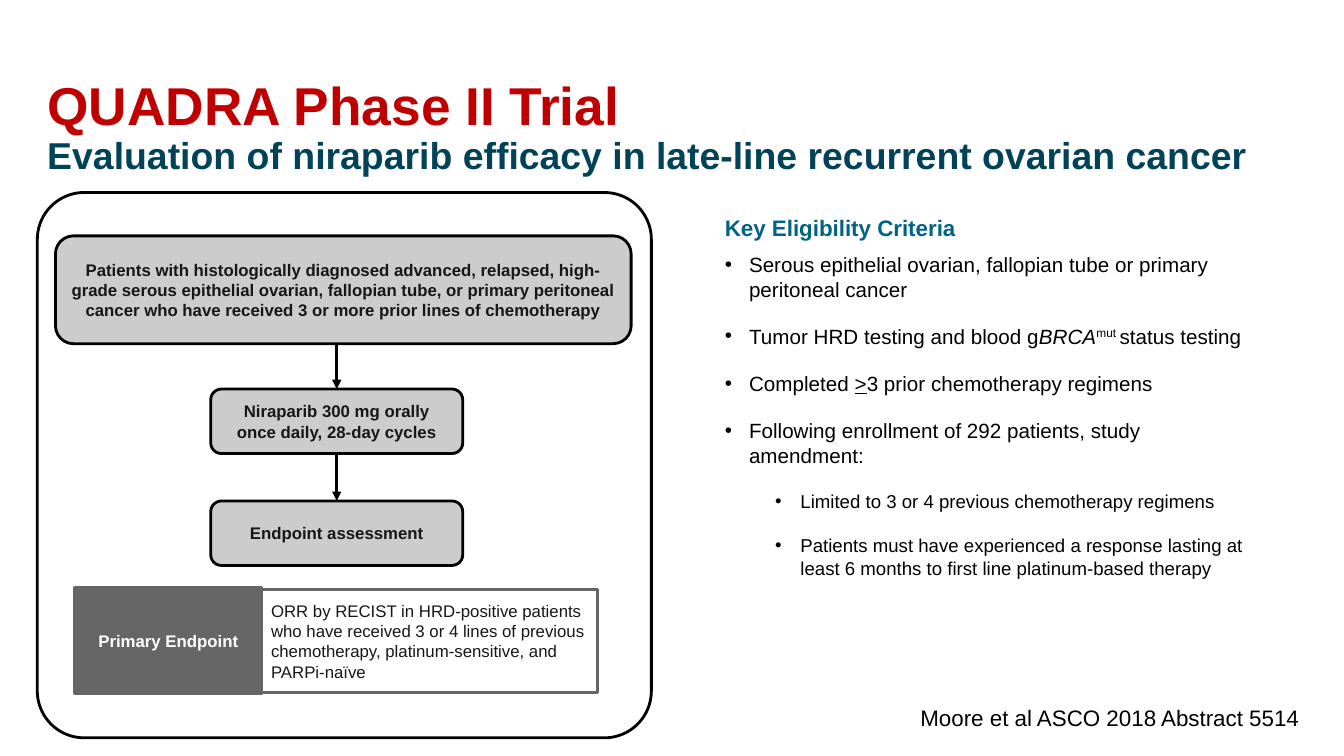
"""Build the QUADRA Phase II trial slide."""
from lxml.etree import SubElement
from pptx import Presentation
from pptx.dml.color import RGBColor
from pptx.enum.shapes import MSO_CONNECTOR, MSO_SHAPE
from pptx.enum.text import MSO_ANCHOR, PP_ALIGN
from pptx.oxml.ns import qn
from pptx.util import Inches, Pt

ROUND, RECT = MSO_SHAPE.ROUNDED_RECTANGLE, MSO_SHAPE.RECTANGLE
BLACK, WHITE, INK = "000000", "FFFFFF", "181717"
LIGHT, DARK = "CCCCCC", "666666"
RULES = [
    (0, [("Serous epithelial ovarian, fallopian tube or primary peritoneal cancer", "")]),
    (0, [("Tumor HRD testing and blood g", ""), ("BRCA", "italic"),
         ("mut ", "super"), ("status testing", "")]),
    (0, [("Completed ", ""), (">", "under"), ("3 prior chemotherapy regimens", "")]),
    (0, [("Following enrollment of 292 patients, study amendment:", "")]),
    (1, [("Limited to 3 or 4 previous chemotherapy regimens", "")]),
    (1, [("Patients must have experienced a response lasting at least 6 months "
          "to first line platinum-based therapy", "")]),
]


def paint(color):
    """Turn a hex string into a colour."""
    return RGBColor.from_string(color)


def style(run, size, color, bold=False):
    """Set the font of a run."""
    font = run.font
    font.name, font.size, font.bold = "Arial", Pt(size), bold
    font.color.rgb = paint(color)


def write(par, text, size, color, bold=False):
    """Fill a paragraph with text in one style."""
    par.text = text
    style(par.runs[0], size, color, bold)


def add_title(slide, left, top, width, height):
    """Place the slide title."""
    title = slide.shapes.title
    title.left, title.top = Inches(left), Inches(top)
    title.width, title.height = Inches(width), Inches(height)
    frame = title.text_frame
    frame.vertical_anchor = MSO_ANCHOR.MIDDLE
    par = frame.paragraphs[0]
    write(par, "QUADRA Phase II Trial", 38, "C00000", True)
    par.alignment = PP_ALIGN.LEFT


def add_text(slide, left, top, width, height, wrap=True):
    """Add an empty text box and return its frame."""
    box = slide.shapes.add_textbox(
        Inches(left), Inches(top), Inches(width), Inches(height))
    box.text_frame.word_wrap = wrap
    return box.text_frame


def add_box(slide, kind, left, top, width, height, fill, line, weight=2):
    """Add an outlined shape, filled if a fill is given."""
    box = slide.shapes.add_shape(
        kind, Inches(left), Inches(top), Inches(width), Inches(height))
    box.shadow.inherit = False
    if fill:
        box.fill.solid()
        box.fill.fore_color.rgb = paint(fill)
    else:
        box.fill.background()
    box.line.color.rgb = paint(line)
    box.line.width = Pt(weight)
    return box


def label(box, text, color=INK, bold=True, align=PP_ALIGN.CENTER):
    """Write a label in a shape."""
    frame = box.text_frame
    frame.word_wrap = True
    frame.vertical_anchor = MSO_ANCHOR.MIDDLE
    par = frame.paragraphs[0]
    par.alignment = align
    write(par, text, 12, color, bold)


def add_arrow(slide, first, last):
    """Draw an arrow down to the top of the last box."""
    mid = last.left + last.width // 2
    base = first.top + first.height
    arrow = slide.shapes.add_connector(
        MSO_CONNECTOR.STRAIGHT, mid, base, mid, last.top)
    if first.left + first.width // 2 == mid:
        arrow.begin_connect(first, 2)
    arrow.end_connect(last, 0)
    arrow.line.color.rgb = paint(BLACK)
    arrow.line.width = Pt(2.25)
    SubElement(arrow.line._get_or_add_ln(), qn("a:tailEnd"), type="triangle")
    SubElement(arrow._element.spPr, qn("a:effectLst"))


def add_flow(slide, left, top, width, height):
    """Draw the framed trial flow."""
    frame = add_box(slide, ROUND, left, top, width, height, WHITE, BLACK)
    frame.adjustments[0] = 0.086
    group = add_box(slide, ROUND, left + 0.18, top + 0.43, 5.71, 1.07, LIGHT, BLACK)
    label(group, "Patients with histologically diagnosed advanced, relapsed, "
          "high-grade serous epithelial ovarian, fallopian tube, or primary "
          "peritoneal cancer who have received 3 or more prior lines of chemotherapy")
    last = group
    steps = ["Niraparib 300 mg orally once daily, 28-day cycles", "Endpoint assessment"]
    for row, text in enumerate(steps):
        step = add_box(slide, ROUND, left + 1.72, top + 1.95 + 1.11 * row,
                       2.5, 0.64, LIGHT, BLACK)
        label(step, text)
        add_arrow(slide, last, step)
        last = step
    add_goal(slide, left + 0.37, top + 3.92, 5.19, 1.05)


def add_goal(slide, left, top, width, height):
    """Draw the primary endpoint with its tag."""
    tag = add_box(slide, RECT, left, top, 1.86, height, DARK, DARK)
    label(tag, "Primary Endpoint", WHITE)
    goal = add_box(slide, RECT, left + 1.85, top + 0.02, width - 1.85,
                   height - 0.03, None, DARK, 2.25)
    label(goal, "ORR by RECIST in HRD-positive patients who have received 3 or 4 "
          "lines of previous chemotherapy, platinum-sensitive, and PARPi-naïve",
          bold=False, align=PP_ALIGN.LEFT)


def add_rule(frame, level, parts):
    """Add one bulleted criterion."""
    par = frame.add_paragraph()
    par.level = level
    par.space_after = Pt(16)
    props = par._p.get_or_add_pPr()
    props.set("marL", str(Inches((0.24, 0.75)[level])))
    props.set("indent", str(-Inches((0.24, 0.25)[level])))
    SubElement(props, qn("a:buFont"), typeface="Arial")
    SubElement(props, qn("a:buChar"), char="•")
    for text, look in parts:
        run = par.add_run()
        run.text = text
        style(run, (14.7, 13.3)[level], BLACK)
        if look == "italic":
            run.font.italic = True
        elif look == "under":
            run.font.underline = True
        elif look == "super":
            run._r.get_or_add_rPr().set("baseline", "30000")


def add_rules(slide, left, top, width, height):
    """List the eligibility criteria."""
    frame = add_text(slide, left, top, width, height)
    head = frame.paragraphs[0]
    write(head, "Key Eligibility Criteria", 16, "006383", True)
    head.space_after = Pt(8)
    for level, parts in RULES:
        add_rule(frame, level, parts)


def main():
    """Build and save the slide."""
    deck = Presentation()
    deck.slide_width, deck.slide_height = Inches(13.33), Inches(7.5)
    slide = deck.slides.add_slide(deck.slide_layouts[5])
    add_title(slide, 0.37, 0.62, 12.52, 0.83)
    par = add_text(slide, 0.37, 1.31, 12.18, 0.9).paragraphs[0]
    write(par, "Evaluation of niraparib efficacy in late-line recurrent ovarian cancer",
          26.7, "004359", True)
    par.line_spacing = 0.9
    add_flow(slide, 0.37, 1.91, 6.09, 5.41)
    add_rules(slide, 7.09, 2.07, 5.51, 4.59)
    cite = add_text(slide, 9.03, 6.94, 4.08, 0.37, False).paragraphs[0]
    write(cite, "Moore et al ASCO 2018 Abstract 5514", 16, BLACK)
    deck.save("out.pptx")


if __name__ == "__main__":
    main()
